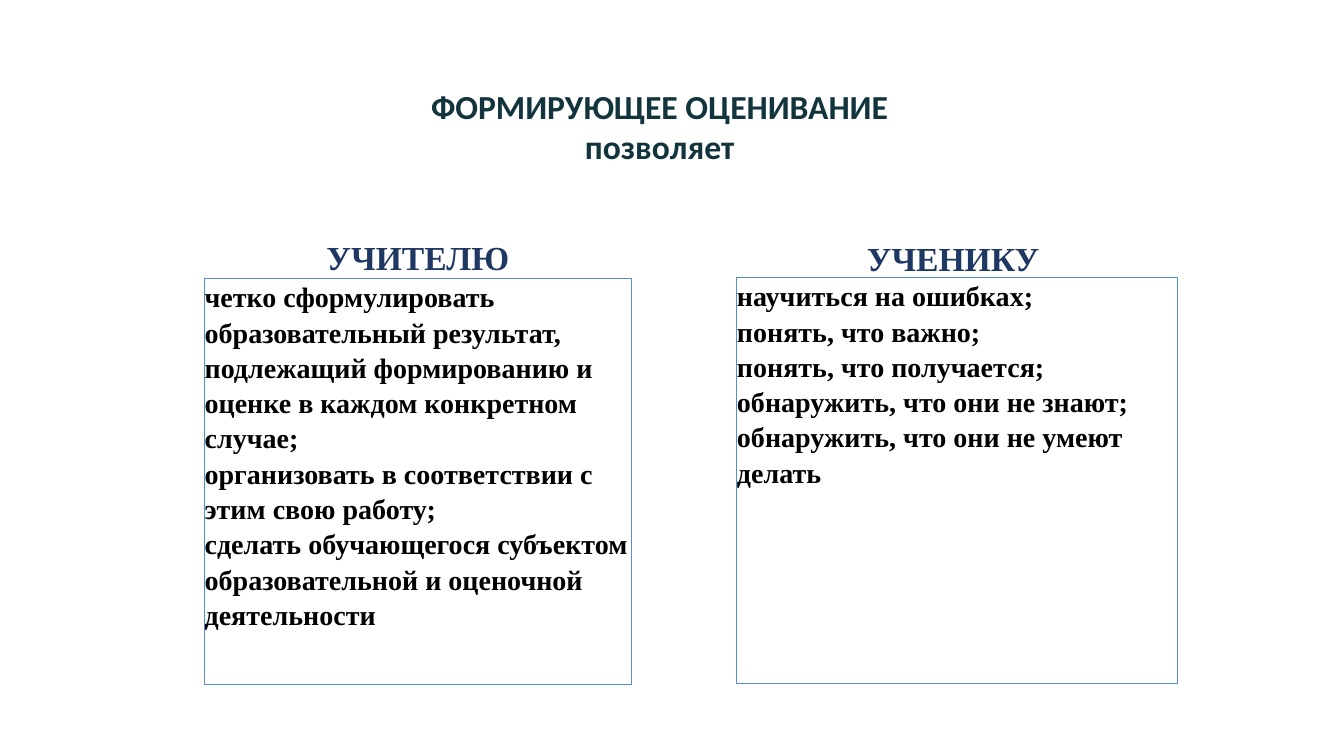
from pptx import Presentation
from pptx.dml.color import RGBColor
from pptx.enum import shapes, text
from pptx.util import Inches, Pt


def color(code):
    return RGBColor.from_string(code)


def write(frame, lines, font, size, ink, align, anchor, spacing=1.0):
    frame.word_wrap = True
    frame.vertical_anchor = anchor
    frame.margin_left = frame.margin_right = 0
    frame.margin_top = frame.margin_bottom = 0
    for number, line in enumerate(lines):
        paragraph = frame.paragraphs[0] if number == 0 else frame.add_paragraph()
        paragraph.alignment = align
        paragraph.line_spacing = spacing
        run = paragraph.add_run()
        run.text = line
        run.font.name = font
        run.font.size = Pt(size)
        run.font.bold = True
        run.font.color.rgb = color(ink)


prs = Presentation()
prs.slide_width = Inches(13.33)
prs.slide_height = Inches(7.5)
slide = prs.slides.add_slide(prs.slide_layouts[6])

LEFT, CENTER = text.PP_ALIGN.LEFT, text.PP_ALIGN.CENTER
TOP, BOTTOM = text.MSO_ANCHOR.TOP, text.MSO_ANCHOR.BOTTOM

title = slide.shapes.add_textbox(Inches(0.83), Inches(0.85), Inches(11.5), Inches(1.45))
write(title.text_frame, ["ФОРМИРУЮЩЕЕ ОЦЕНИВАНИЕ ", "позволяет "],
      "Calibri", 24, "12343C", CENTER, TOP)

audiences = [
    ("УЧИТЕЛЮ", 2.03, 4.23, 1.85, 2.76, [
        "четко сформулировать образовательный результат, подлежащий формированию "
        "и оценке в каждом конкретном случае;",
        "организовать в соответствии с этим свою работу;",
        "сделать обучающегося субъектом образовательной и оценочной деятельности",
    ]),
    ("УЧЕНИКУ ", 7.31, 4.37, 1.86, 2.75, [
        "научиться на ошибках;",
        "понять, что важно;",
        "понять, что получается;",
        "обнаружить, что они не знают;",
        "обнаружить, что они не умеют делать",
    ]),
]

for audience, left, width, heading_top, benefits_top, benefits in audiences:
    heading = slide.shapes.add_textbox(
        Inches(left), Inches(heading_top), Inches(width), Inches(0.9))
    write(heading.text_frame, [audience],
          "Times New Roman", 24, "1F3863", CENTER, BOTTOM)

    panel = slide.shapes.add_shape(
        shapes.MSO_SHAPE.RECTANGLE,
        Inches(left), Inches(benefits_top), Inches(width), Inches(4.03))
    panel.shadow.inherit = False
    panel.fill.background()
    panel.line.color.rgb = color("558ED5")
    panel.line.width = Pt(0.75)
    write(panel.text_frame, benefits,
          "Times New Roman", 20, "000000", LEFT, TOP, 1.05)

prs.save("out.pptx")
